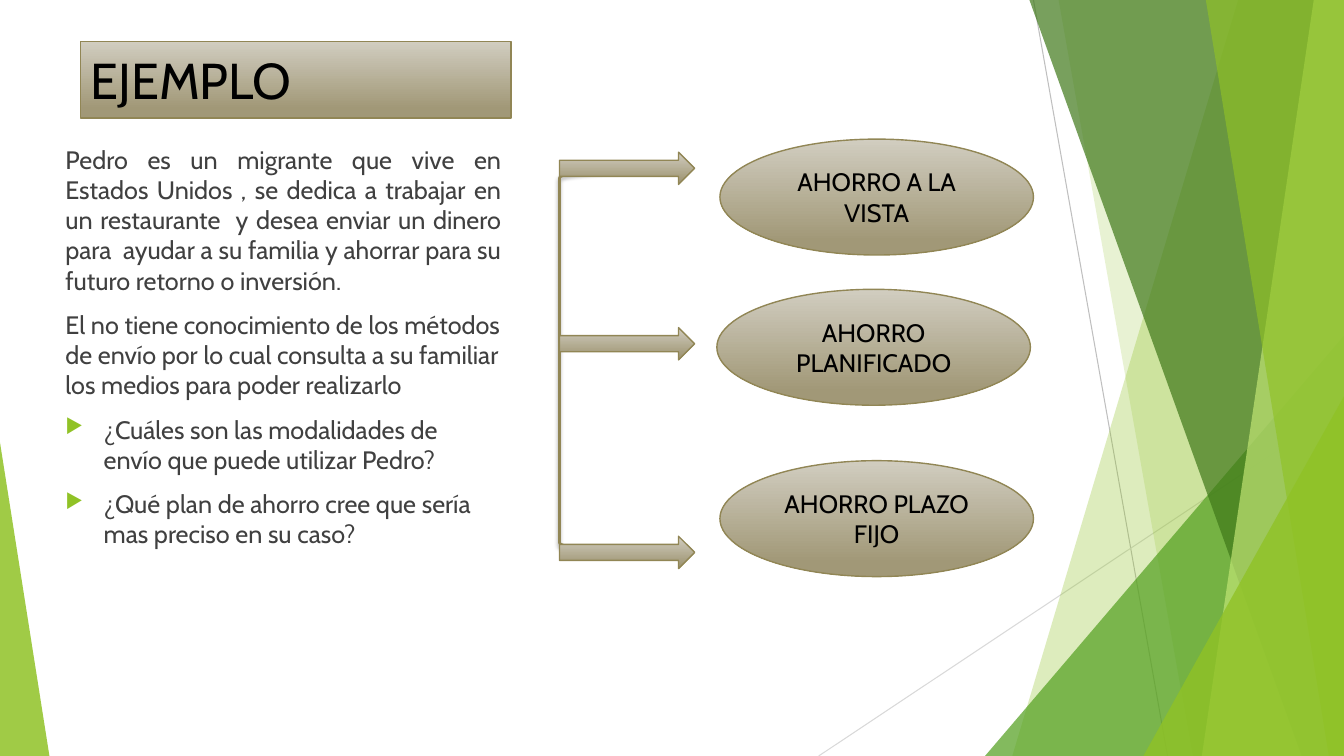
"""Build the savings example slide."""
from dataclasses import dataclass

from lxml import etree
from pptx import Presentation
from pptx.dml.color import RGBColor
from pptx.enum.shapes import MSO_CONNECTOR, MSO_SHAPE
from pptx.enum.text import MSO_ANCHOR, PP_ALIGN
from pptx.oxml.ns import qn
from pptx.shapes.autoshape import Shape
from pptx.shapes.shapetree import SlideShapes
from pptx.text.text import TextFrame, _Paragraph
from pptx.util import Inches, Pt

STRAIGHT = MSO_CONNECTOR.STRAIGHT
RECT, OVAL = MSO_SHAPE.RECTANGLE, MSO_SHAPE.OVAL
ARROW, BRACKET = MSO_SHAPE.RIGHT_ARROW, MSO_SHAPE.LEFT_BRACKET
PEAK = MSO_SHAPE.ISOSCELES_TRIANGLE
LEFT, CENTER, JUSTIFY = PP_ALIGN.LEFT, PP_ALIGN.CENTER, PP_ALIGN.JUSTIFY
TOP, MIDDLE = MSO_ANCHOR.TOP, MSO_ANCHOR.MIDDLE

BLACK = RGBColor(0x00, 0x00, 0x00)
GRAY = RGBColor(0x40, 0x40, 0x40)
SILVER = RGBColor(0xBF, 0xBF, 0xBF)
PALE = RGBColor(0xD9, 0xD9, 0xD9)
LIME = RGBColor(0x90, 0xC2, 0x26)
GREEN = RGBColor(0x54, 0xA0, 0x21)
FOREST = RGBColor(0x3F, 0x78, 0x19)
MINT = RGBColor(0xC0, 0xE4, 0x74)
SAND = RGBColor(0xD1, 0xCD, 0xC0)
KHAKI = RGBColor(0xA1, 0x98, 0x77)
BRONZE = RGBColor(0x91, 0x86, 0x55)

FONT = "Cabin"
WIDE, HIGH = 13.33, 7.5


@dataclass
class Ray:
    start: tuple[float, float]
    end: tuple[float, float]
    color: RGBColor


@dataclass
class Band:
    head: float
    foot: float
    color: RGBColor
    alpha: int


@dataclass
class Wedge:
    left: float
    top: float
    width: float
    tip: float
    color: RGBColor
    alpha: int


@dataclass
class Plan:
    left: float
    top: float
    label: str


@dataclass
class Para:
    words: str
    align: PP_ALIGN = LEFT
    bullet: bool = False


RAYS = [
    Ray((10.25, 0), (11.58, HIGH), SILVER),
    Ray((WIDE, 4.03), (8.12, HIGH), PALE),
]
FACETS = [
    Band(12.28, 10.04, LIME, 30),
    Band(10.5, 11.83, LIME, 20),
    Wedge(9.77, 3.33, 3.56, 1, GREEN, 72),
    Band(10.21, 12.91, FOREST, 70),
    Band(13.03, 11.92, MINT, 70),
    Band(11.96, 13.18, LIME, 65),
    Wedge(11.34, 3.93, 1.99, 1, LIME, 80),
    Wedge(0, 4.39, 0.49, 0, LIME, 85),
]
PLANS = [
    Plan(7.14, 1.38, "AHORRO A LA VISTA"),
    Plan(7.11, 2.87, "AHORRO PLANIFICADO"),
    Plan(7.14, 4.57, "AHORRO PLAZO FIJO"),
]
ARROWS = [1.51, 3.25, 5.32]
STORY = [
    Para("Pedro es un migrante que vive en Estados Unidos , se dedica a trabajar en "
         "un restaurante  y desea enviar un dinero para  ayudar a su familia y "
         "ahorrar para su futuro retorno o inversión.", align=JUSTIFY),
    Para("El no tiene conocimiento de los métodos de envío por lo cual consulta a su "
         "familiar los medios para poder realizarlo"),
    Para("¿Cuáles son las modalidades de envío que puede utilizar Pedro?", bullet=True),
    Para("¿Qué plan de ahorro cree que sería mas preciso en su caso?", bullet=True),
]


def add_bullet(para: _Paragraph) -> None:
    props = para._p.get_or_add_pPr()
    props.set("marL", str(Inches(0.38)))
    props.set("indent", str(Inches(-0.38)))
    tint = etree.SubElement(props, qn("a:buClr"))
    etree.SubElement(tint, qn("a:srgbClr"), val=str(LIME))
    etree.SubElement(props, qn("a:buSzPct"), val="80000")
    etree.SubElement(props, qn("a:buChar"), char="▶")


def write(frame: TextFrame, paras: list[Para], *, size: int = 18,
          color: RGBColor = BLACK, anchor: MSO_ANCHOR = MIDDLE, gap: int = 0) -> None:
    frame.word_wrap = True
    frame.vertical_anchor = anchor
    for index, item in enumerate(paras):
        para = frame.add_paragraph() if index else frame.paragraphs[0]
        para.alignment = item.align
        para.space_before = Pt(gap)
        if item.bullet:
            add_bullet(para)
        run = para.add_run()
        run.text = item.words
        run.font.name, run.font.size = FONT, Pt(size)
        run.font.color.rgb = color


def draw_ray(shapes: SlideShapes, ray: Ray) -> None:
    line = shapes.add_connector(STRAIGHT, *map(Inches, ray.start + ray.end))
    line.line.color.rgb = ray.color
    line.line.width = Pt(0.75)
    etree.SubElement(line._element.spPr, qn("a:effectLst"))


def draw_facet(shapes: SlideShapes, facet: Band | Wedge) -> None:
    if isinstance(facet, Band):
        pen = shapes.build_freeform(Inches(facet.head), 0)
        corners = [(WIDE, 0), (WIDE, HIGH), (facet.foot, HIGH)]
        pen.add_line_segments([(Inches(x), Inches(y)) for x, y in corners])
        shape = pen.convert_to_shape()
    else:
        box = facet.left, facet.top, facet.width, HIGH - facet.top
        shape = shapes.add_shape(PEAK, *map(Inches, box))
        shape.adjustments[0] = facet.tip
    shape.shadow.inherit = False
    shape.line.fill.background()
    shape.fill.solid()
    shape.fill.fore_color.rgb = facet.color
    tint = shape._element.spPr.find(".//" + qn("a:srgbClr"))
    etree.SubElement(tint, qn("a:alpha"), val=str(facet.alpha * 1000))


def draw_block(shapes: SlideShapes, kind: MSO_SHAPE, left: float, top: float,
               width: float, height: float) -> Shape:
    shape = shapes.add_shape(kind, *map(Inches, (left, top, width, height)))
    shape.shadow.inherit = False
    shape.line.color.rgb = BRONZE
    shape.line.width = Pt(1)
    shape.fill.gradient()
    shape.fill.gradient_angle = 270
    stops = zip(shape.fill.gradient_stops, (SAND, KHAKI), (0, 0.88))
    for stop, color, place in stops:
        stop.color.rgb = color
        stop.position = place
    return shape


def draw_brace(shapes: SlideShapes) -> None:
    brace = draw_block(shapes, BRACKET, 5.55, 1.67, 1.12, 3.81)
    brace.fill.background()
    brace.line.width = Pt(2)
    effects = brace._element.spPr.find(qn("a:effectLst"))
    shade = etree.SubElement(effects, qn("a:outerShdw"), blurRad=str(Pt(3)),
                             dist=str(Pt(2)), dir="5400000", rotWithShape="0")
    tint = etree.SubElement(shade, qn("a:srgbClr"), val=str(BLACK))
    etree.SubElement(tint, qn("a:alpha"), val="35000")


def main() -> None:
    deck = Presentation()
    deck.slide_width, deck.slide_height = Inches(WIDE), Inches(HIGH)
    shapes = deck.slides.add_slide(deck.slide_layouts[6]).shapes
    for ray in RAYS:
        draw_ray(shapes, ray)
    for facet in FACETS:
        draw_facet(shapes, facet)
    title = draw_block(shapes, RECT, 0.8, 0.41, 4.27, 0.76)
    write(title.text_frame, [Para("EJEMPLO")], size=36)
    body = shapes.add_textbox(*map(Inches, (0.55, 1.38, 4.52, 5.93)))
    write(body.text_frame, STORY, color=GRAY, anchor=TOP, gap=10)
    for plan in PLANS:
        oval = draw_block(shapes, OVAL, plan.left, plan.top, 3.11, 1.15)
        write(oval.text_frame, [Para(plan.label, align=CENTER)])
    draw_brace(shapes)
    for top in ARROWS:
        draw_block(shapes, ARROW, 5.55, top, 1.34, 0.32)
    deck.save("out.pptx")


if __name__ == "__main__":
    main()
